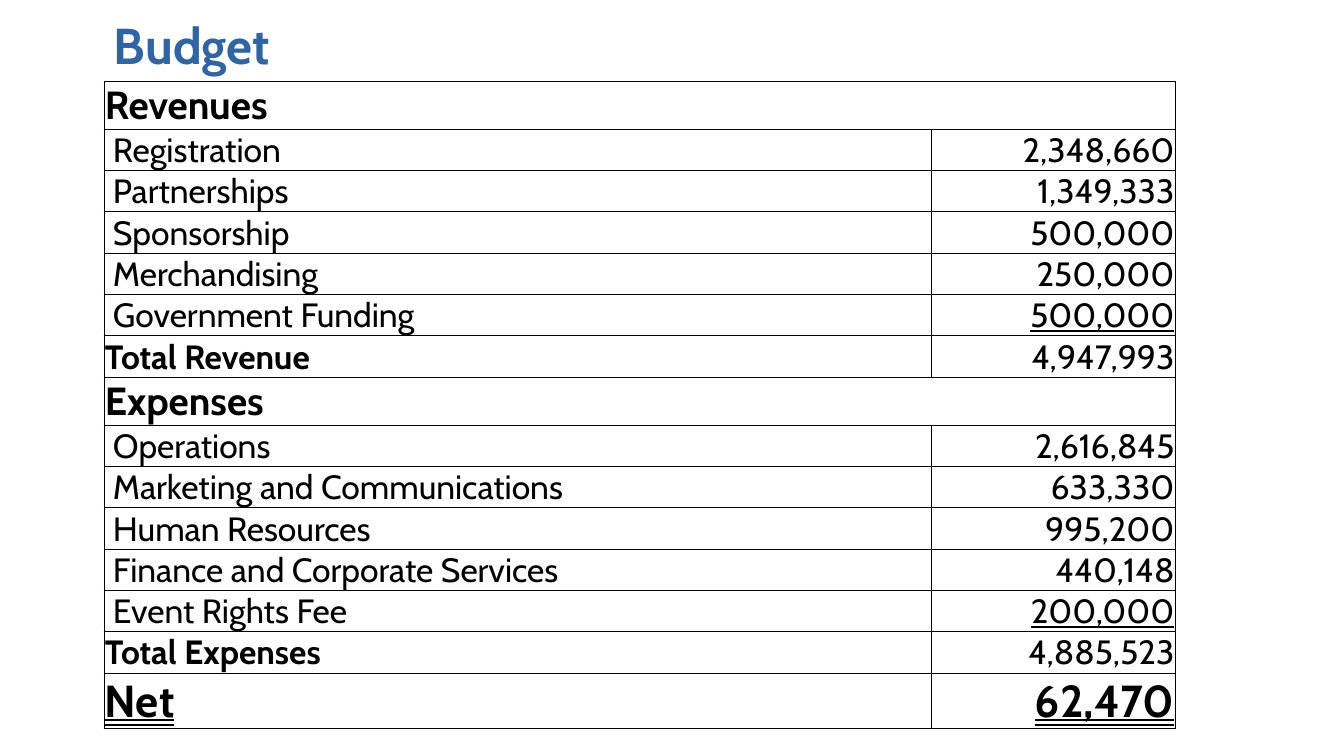
from lxml import etree
from pptx import Presentation
from pptx.dml.color import RGBColor
from pptx.enum.text import MSO_ANCHOR, MSO_AUTO_SIZE, MSO_UNDERLINE, PP_ALIGN
from pptx.oxml.ns import qn
from pptx.util import Pt

LEFT, RIGHT = PP_ALIGN.LEFT, PP_ALIGN.RIGHT
TOP, BOTTOM = MSO_ANCHOR.TOP, MSO_ANCHOR.BOTTOM
SINGLE, DOUBLE = MSO_UNDERLINE.SINGLE_LINE, MSO_UNDERLINE.DOUBLE_LINE
FIT_SHAPE = MSO_AUTO_SIZE.SHAPE_TO_FIT_TEXT

FONT = "Cabin"
COLORS = {"title": "3164A3", "text": "000000", "border": "000000", "cell": "FFFFFF"}
COLUMN_WIDTHS = (591.1, 174.3)
BORDER_WIDTH = 0.5

# Per row kind: height, label indent, label font and amount font
ROW_KINDS = {
    "section": (34.3, 0.7, {"size": Pt(28), "bold": True}, {}),
    "item": (29.5, 6.5, {"size": Pt(24), "bold": False}, {"size": Pt(24), "bold": False}),
    "last": (29.5, 6.5, {"size": Pt(24), "bold": False},
             {"size": Pt(24), "bold": False, "underline": SINGLE}),
    "total": (29.5, 0.7, {"size": Pt(24), "bold": True}, {"size": Pt(24), "bold": False}),
    "net": (39.4, 0.7, {"size": Pt(32), "bold": True, "underline": DOUBLE},
            {"size": Pt(32), "bold": True, "underline": DOUBLE}),
}

BUDGET = [
    ("section", "Revenues", ""),
    ("item", "Registration", "2,348,660"),
    ("item", "Partnerships", "1,349,333"),
    ("item", "Sponsorship", "500,000"),
    ("item", "Merchandising", "250,000"),
    ("last", "Government Funding", "500,000"),
    ("total", "Total Revenue", "4,947,993"),
    ("section", "Expenses", ""),
    ("item", "Operations", "2,616,845"),
    ("item", "Marketing and Communications", "633,330"),
    ("item", "Human Resources", "995,200"),
    ("item", "Finance and Corporate Services", "440,148"),
    ("last", "Event Rights Fee", "200,000"),
    ("total", "Total Expenses", "4,885,523"),
    ("net", "Net", "62,470"),
]


def set_attrs(obj, values):
    for name, value in values.items():
        setattr(obj, name, value)


def write_text(tf, text, align, color, font):
    p = tf.paragraphs[0]
    p.alignment = align
    r = p.add_run()
    r.text = text
    set_attrs(r.font, {"name": FONT, **font})
    r.font.color.rgb = RGBColor.from_string(COLORS[color])


def set_borders(cell, open_side=None):
    """Draw a thin line on every side except open_side."""
    tc_pr = cell._tc.get_or_add_tcPr()
    for side in ("L", "R", "T", "B"):
        ln = etree.SubElement(tc_pr, qn("a:ln" + side), w=str(Pt(BORDER_WIDTH)))
        if side == open_side:
            etree.SubElement(ln, qn("a:noFill"))
        else:
            fill = etree.SubElement(ln, qn("a:solidFill"))
            etree.SubElement(fill, qn("a:srgbClr"), val=COLORS["border"])


def fill_cell(cell, text, align, indent, font, open_side):
    set_borders(cell, open_side)
    cell.fill.solid()
    cell.fill.fore_color.rgb = RGBColor.from_string(COLORS["cell"])
    set_attrs(cell, {"margin_left": Pt(indent), "margin_right": Pt(0.7),
                     "margin_top": Pt(0.7), "margin_bottom": 0,
                     "vertical_anchor": BOTTOM})
    if text:
        write_text(cell.text_frame, text, align, "text", font)


def add_title(slide, text):
    sp = slide.shapes.title
    set_attrs(sp, {"left": Pt(74.2), "top": Pt(10), "width": Pt(636.5), "height": Pt(47.5)})
    tf = sp.text_frame
    set_attrs(tf, {"word_wrap": True, "auto_size": FIT_SHAPE, "vertical_anchor": TOP})
    write_text(tf, text, LEFT, "title", {"size": Pt(36), "bold": True})
    tf.paragraphs[0].line_spacing = 0.93


def add_budget_table(slide):
    height = sum(ROW_KINDS[kind][0] for kind, _, _ in BUDGET)
    table = slide.shapes.add_table(len(BUDGET), len(COLUMN_WIDTHS), Pt(74.2), Pt(57.9),
                                   Pt(sum(COLUMN_WIDTHS)), Pt(height)).table
    set_attrs(table, {"first_row": False, "horz_banding": False})
    for column, width in zip(table.columns, COLUMN_WIDTHS):
        column.width = Pt(width)
    for row, (kind, label, amount) in zip(table.rows, BUDGET):
        row_height, indent, label_font, amount_font = ROW_KINDS[kind]
        row.height = Pt(row_height)
        is_section = kind == "section"
        fill_cell(row.cells[0], label, LEFT, indent, label_font, "R" if is_section else None)
        fill_cell(row.cells[1], amount, RIGHT, 0.7, amount_font, "L" if is_section else None)


def main():
    prs = Presentation()
    set_attrs(prs, {"slide_width": Pt(960), "slide_height": Pt(540)})
    slide = prs.slides.add_slide(prs.slide_layouts.get_by_name("Title Only"))
    add_title(slide, "Budget")
    add_budget_table(slide)
    prs.save("out.pptx")


if __name__ == "__main__":
    main()
